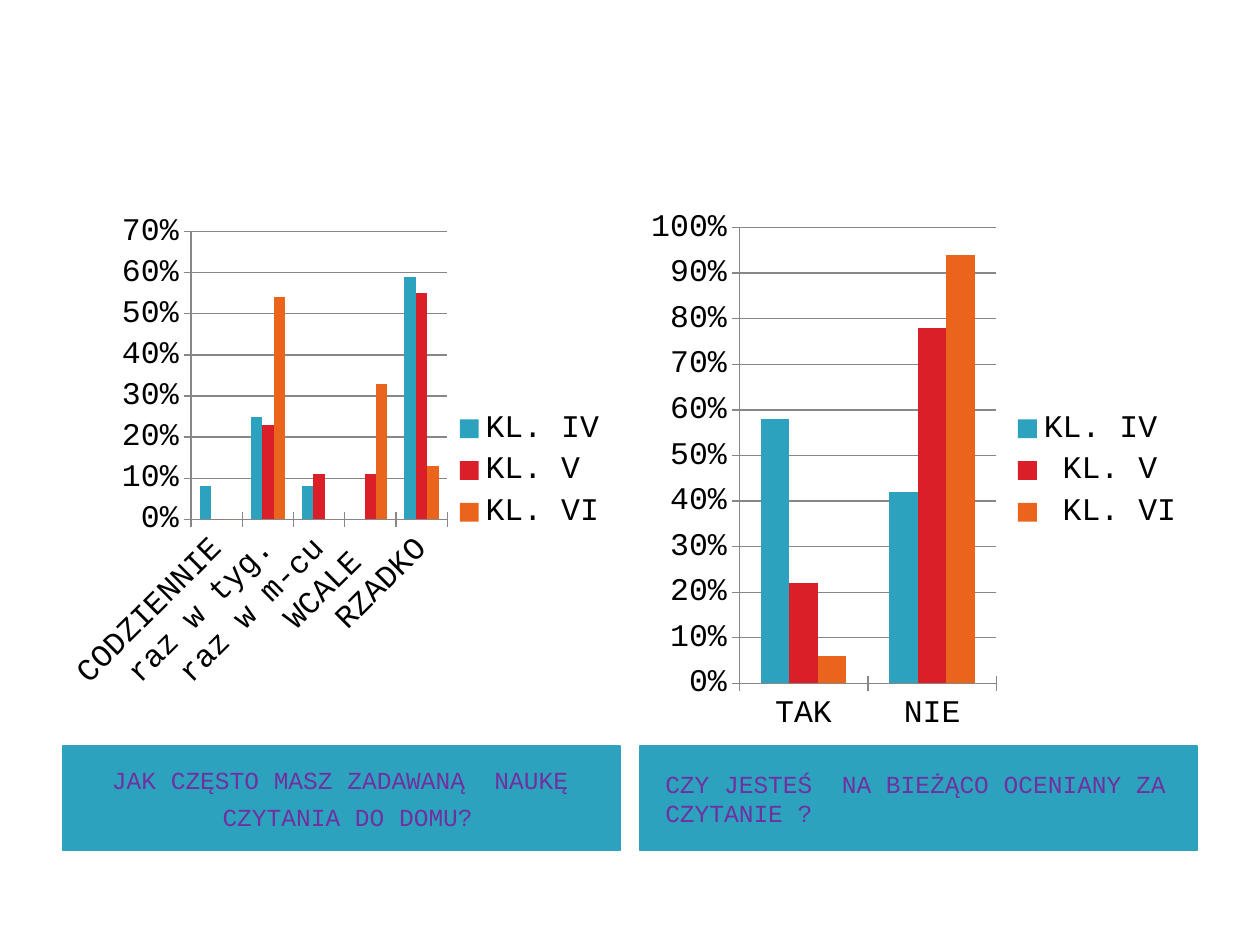
import dataclasses

import pptx
import pptx.chart.data
import pptx.dml.color
import pptx.enum.chart
import pptx.enum.shapes
import pptx.enum.text
import pptx.oxml
import pptx.oxml.ns
import pptx.util
from pptx.util import Inches


def rgb(code):
    return pptx.dml.color.RGBColor.from_string(code)


@dataclasses.dataclass(frozen=True)
class Theme:
    font: str = "Courier New"
    chart_size: int = 18
    question_size: int = 14
    chart_text: str = "000000"
    question_text: str = "7030A0"
    question_fill: str = "2DA2BF"
    axis: str = "878787"
    classes: tuple = ("2DA2BF", "DA1F28", "EB641B")


THEME = Theme()
COLUMN_LEFTS = (0.5, 5.08)
COLUMN_WIDTH = 4.42


def style_font(font, size, color):
    font.name = THEME.font
    font.size = pptx.util.Pt(size)
    font.color.rgb = rgb(color)


def add_question(slide, left, lines, alignment):
    question = slide.shapes.add_shape(
        pptx.enum.shapes.MSO_SHAPE.RECTANGLE,
        Inches(left), Inches(5.92), Inches(COLUMN_WIDTH), Inches(0.83))
    question.shadow.inherit = False
    question.fill.solid()
    question.fill.fore_color.rgb = rgb(THEME.question_fill)
    question.line.color.rgb = rgb(THEME.question_fill)
    question.line.width = pptx.util.Pt(0.75)

    frame = question.text_frame
    frame.word_wrap = True
    frame.vertical_anchor = pptx.enum.text.MSO_ANCHOR.MIDDLE
    frame.margin_left, frame.margin_right = Inches(0.2), Inches(0.1)
    frame.margin_top = frame.margin_bottom = Inches(0.05)
    frame.text = "\n".join(lines)
    for index, paragraph in enumerate(frame.paragraphs):
        paragraph.alignment = alignment
        if index:
            paragraph.space_before = pptx.util.Pt(4)
        for run in paragraph.runs:
            style_font(run.font, THEME.question_size, THEME.question_text)


def set_plot_layout(chart, x, y, width, height):
    plot_area = chart.plots[0]._element.getparent()
    for old_layout in plot_area.findall(pptx.oxml.ns.qn("c:layout")):
        plot_area.remove(old_layout)
    plot_area.insert(0, pptx.oxml.parse_xml(
        f'<c:layout {pptx.oxml.ns.nsdecls("c")}><c:manualLayout>'
        '<c:layoutTarget val="inner"/><c:xMode val="edge"/><c:yMode val="edge"/>'
        f'<c:x val="{x}"/><c:y val="{y}"/><c:w val="{width}"/><c:h val="{height}"/>'
        '</c:manualLayout></c:layout>'))


def add_answers(slide, left, answers, shares_by_class):
    data = pptx.chart.data.CategoryChartData(number_format="0%")
    data.categories = answers
    for class_name, shares in shares_by_class.items():
        data.add_series(class_name, shares)
    chart = slide.shapes.add_chart(
        pptx.enum.chart.XL_CHART_TYPE.COLUMN_CLUSTERED,
        Inches(left), Inches(1.58), Inches(COLUMN_WIDTH), Inches(4.31), data).chart
    chart.has_title = False
    style_font(chart.font, THEME.chart_size, THEME.chart_text)

    chart.has_legend = True
    chart.legend.position = pptx.enum.chart.XL_LEGEND_POSITION.RIGHT
    chart.legend.include_in_layout = False

    for axis in (chart.category_axis, chart.value_axis):
        axis.major_tick_mark = pptx.enum.chart.XL_TICK_MARK.CROSS
        axis.format.line.color.rgb = rgb(THEME.axis)
    chart.value_axis.has_major_gridlines = True
    chart.value_axis.major_gridlines.format.line.color.rgb = rgb(THEME.axis)
    chart.value_axis.tick_labels.number_format = "0%"
    chart.value_axis.tick_labels.number_format_is_linked = False

    plot = chart.plots[0]
    plot.vary_by_categories = False
    plot.gap_width = 150
    plot.overlap = 0
    for series, color in zip(plot.series, THEME.classes):
        series.format.fill.solid()
        series.format.fill.fore_color.rgb = rgb(color)
    return chart


def main():
    deck = pptx.Presentation()
    deck.slide_width, deck.slide_height = Inches(10), Inches(7.5)
    slide = deck.slides.add_slide(deck.slide_layouts[6])
    homework_left, grading_left = COLUMN_LEFTS
    align = pptx.enum.text.PP_ALIGN

    add_question(slide, homework_left,
                 ["JAK CZĘSTO MASZ ZADAWANĄ  NAUKĘ ", "CZYTANIA DO DOMU?"], align.CENTER)
    add_question(slide, grading_left,
                 ["CZY JESTEŚ  NA BIEŻĄCO OCENIANY ZA CZYTANIE ?"], align.LEFT)

    homework = add_answers(
        slide, homework_left,
        ["CODZIENNIE", "raz w tyg.", "raz w m-cu", "WCALE ", "RZADKO"],
        {"KL. IV": (0.08, 0.25, 0.08, 0, 0.59),
         "KL. V": (0, 0.23, 0.11, 0.11, 0.55),
         "KL. VI": (0, 0.54, 0, 0.33, 0.13)})
    set_plot_layout(homework, 0.23, 0.06, 0.46, 0.53)
    add_answers(
        slide, grading_left, ["TAK", "NIE"],
        {"KL. IV": (0.58, 0.42), " KL. V": (0.22, 0.78), " KL. VI": (0.06, 0.94)})

    deck.save("out.pptx")


if __name__ == "__main__":
    main()
